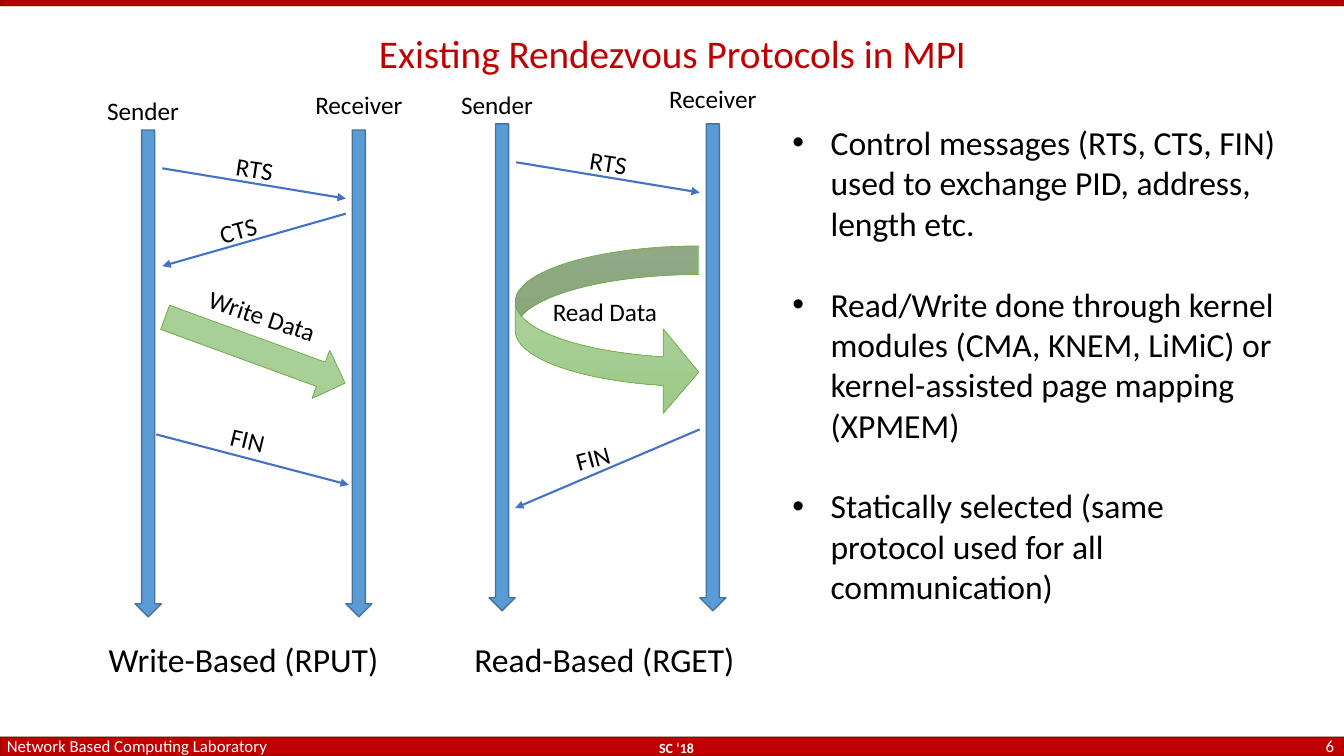
from lxml import etree
from pptx import Presentation
from pptx.dml.color import RGBColor
from pptx.enum import shapes, text
from pptx.oxml.ns import qn
from pptx.util import Inches, Pt

RED, WHITE, BLACK = "C00000", "FFFFFF", "000000"
TITLE = "Existing Rendezvous Protocols in MPI"
POINTS = [
    "Control messages (RTS, CTS, FIN) used to exchange PID, address, length etc.",
    "Read/Write done through kernel modules (CMA, KNEM, LiMiC) or "
    "kernel-assisted page mapping (XPMEM)",
    "Statically selected (same protocol used for all communication)",
]
BARS = [(7.31, 0.19), (0, 0.06)]  # top, height

# Places inside a diagram are measured from the top left of its sender lane.
LANES = [("Sender", 0, (-0.42, -0.39)), ("Receiver", 2.09, (1.72, -0.45))]
RTS = ("RTS", (0.27, 0.38), (2.09, 0.68), (0.68, 0.18), 8.7)
DIAGRAMS = [
    dict(
        caption="Write-Based (RPUT)", caption_left=0.84, origin=(1.34, 1.29),
        messages=[
            RTS,
            ("CTS", (2.09, 0.83), (0.27, 1.35), (0.53, 0.79), -15.1),
            ("FIN", (0.21, 3.02), (2.12, 3.52), (0.61, 2.87), 13.6),
        ],
        data=dict(kind="RIGHT_ARROW", box=(0.24, 1.93, 1.9, 0.51), turn=20.1, adj=[],
                  label="Write Data", label_at=(0.75, 1.64), label_turn=18.3),
    ),
    dict(
        caption="Read-Based (RGET)", caption_left=4.42, origin=(4.85, 1.23),
        messages=[
            RTS,
            ("FIN", (2.09, 3.03), (0.26, 3.81), (0.54, 3.11), -15.1),
        ],
        data=dict(kind="CURVED_RIGHT_ARROW", box=(0.26, 1.21, 1.82, 1.67), turn=0,
                  adj=[0.17, 0.5, 0.21],
                  label="Read Data", label_at=(0.65, 1.66), label_turn=0),
    ),
]
LABEL_WIDTH, LABEL_MARGIN = 1, 0.2  # the margin widens a label equally on both sides

prs = Presentation()
prs.slide_width, prs.slide_height = Inches(13.33), Inches(7.5)
s = prs.slides.add_slide(prs.slide_layouts[6])


def rgb(value):
    return RGBColor.from_string(value)


def add_text(lines, x, y, w, h, size=18, color=BLACK, bold=False, align="CENTER",
             anchor="TOP", spacing=None, wrap=True, turn=0, bullet=False):
    box = s.shapes.add_textbox(*map(Inches, (x, y, w, h)))
    box.rotation = turn
    tf = box.text_frame
    tf.word_wrap = wrap
    tf.vertical_anchor = getattr(text.MSO_ANCHOR, anchor)
    for i, line in enumerate([lines] if isinstance(lines, str) else lines):
        p = tf.add_paragraph() if i else tf.paragraphs[0]
        p.alignment = getattr(text.PP_ALIGN, align)
        if spacing:
            p.line_spacing = spacing
        if bullet:
            if i:
                p.space_before = Pt(29)
            pPr = p._p.get_or_add_pPr()
            pPr.set("marL", str(Inches(0.38)))
            pPr.set("indent", str(-Inches(0.38)))
            etree.SubElement(pPr, qn("a:buFont")).set("typeface", "Arial")
            etree.SubElement(pPr, qn("a:buChar")).set("char", "•")
        r = p.add_run()
        r.text = line
        r.font.name, r.font.size, r.font.bold = "Calibri", Pt(size), bold
        r.font.color.rgb = rgb(color)


def add_shape(kind, x, y, w, h, fill, line, width, turn=0, adj=()):
    sp = s.shapes.add_shape(getattr(shapes.MSO_SHAPE, kind), *map(Inches, (x, y, w, h)))
    sp.shadow.inherit = False
    sp.rotation = turn
    for i, value in enumerate(adj):
        sp.adjustments[i] = value
    if isinstance(fill, str):
        sp.fill.solid()
        sp.fill.fore_color.rgb = rgb(fill)
    else:
        sp.fill.gradient()
        sp.fill.gradient_angle = 270
        for stop, color in zip(sp.fill.gradient_stops, fill):
            stop.color.rgb = rgb(color)
    sp.line.color.rgb = rgb(line)
    sp.line.width = Pt(width)
    return sp


def add_arrow(start, end):
    c = s.shapes.add_connector(shapes.MSO_CONNECTOR.STRAIGHT, *map(Inches, start + end))
    c.line.color.rgb = rgb("4472C4")
    c.line.width = Pt(1.5)
    etree.SubElement(c.line._get_or_add_ln(), qn("a:tailEnd")).set("type", "triangle")
    etree.SubElement(c._element.spPr, qn("a:effectLst"))


def draw_diagram(caption, caption_left, origin, messages, data):
    def place(point):
        return origin[0] + point[0], origin[1] + point[1]

    def label(words, point, turn=0):
        x, y = place(point)
        add_text(words, x - LABEL_MARGIN, y, LABEL_WIDTH + 2 * LABEL_MARGIN, 0.47,
                 wrap=False, turn=turn)

    for name, x, name_at in LANES:
        add_shape("DOWN_ARROW", *place((x, 0)), 0.26, 4.83, "5B9BD5", "43739E", 1)
        label(name, name_at)
    for name, start, end, name_at, turn in messages:
        add_arrow(place(start), place(end))
        label(name, name_at, turn)
    x, y, w, h = data["box"]
    add_shape(data["kind"], *place((x, y)), w, h, ("B5D5A7", "9CC987"), "70AD47", 0.5,
              turn=data["turn"], adj=data["adj"])
    label(data["label"], data["label_at"], data["label_turn"])
    add_text(caption, caption_left, 6.35, 3.15, 0.42, size=24, anchor="MIDDLE", spacing=0.9)


# Bars with a faint outline
for top, height in BARS:
    bar = add_shape("RECTANGLE", 0, top, 13.33, height, RED, BLACK, 1)
    outline = bar.line._get_or_add_ln().find(".//" + qn("a:srgbClr"))
    etree.SubElement(outline, qn("a:alpha")).set("val", "25000")

# Footer
add_text("SC ‘18", 5.31, 7.29, 2.8, 0.26, size=10, color=WHITE, bold=True, anchor="BOTTOM")
add_text("6", 12.45, 7.31, 0.88, 0.18, size=12, color=WHITE, align="RIGHT", anchor="MIDDLE")
add_text("Network Based Computing Laboratory", -0.03, 7.29, 3.81, 0.26, size=12,
         color=WHITE, align="LEFT", anchor="BOTTOM")

# Title, diagrams and points
add_text(TITLE, 0.92, 0.26, 11.5, 0.59, size=28, color=RED, anchor="MIDDLE", spacing=0.9)
for diagram in DIAGRAMS:
    draw_diagram(**diagram)
add_text(POINTS, 7.76, 1.16, 5.06, 5.61, size=24, align="LEFT", bullet=True)

prs.save("out.pptx")
